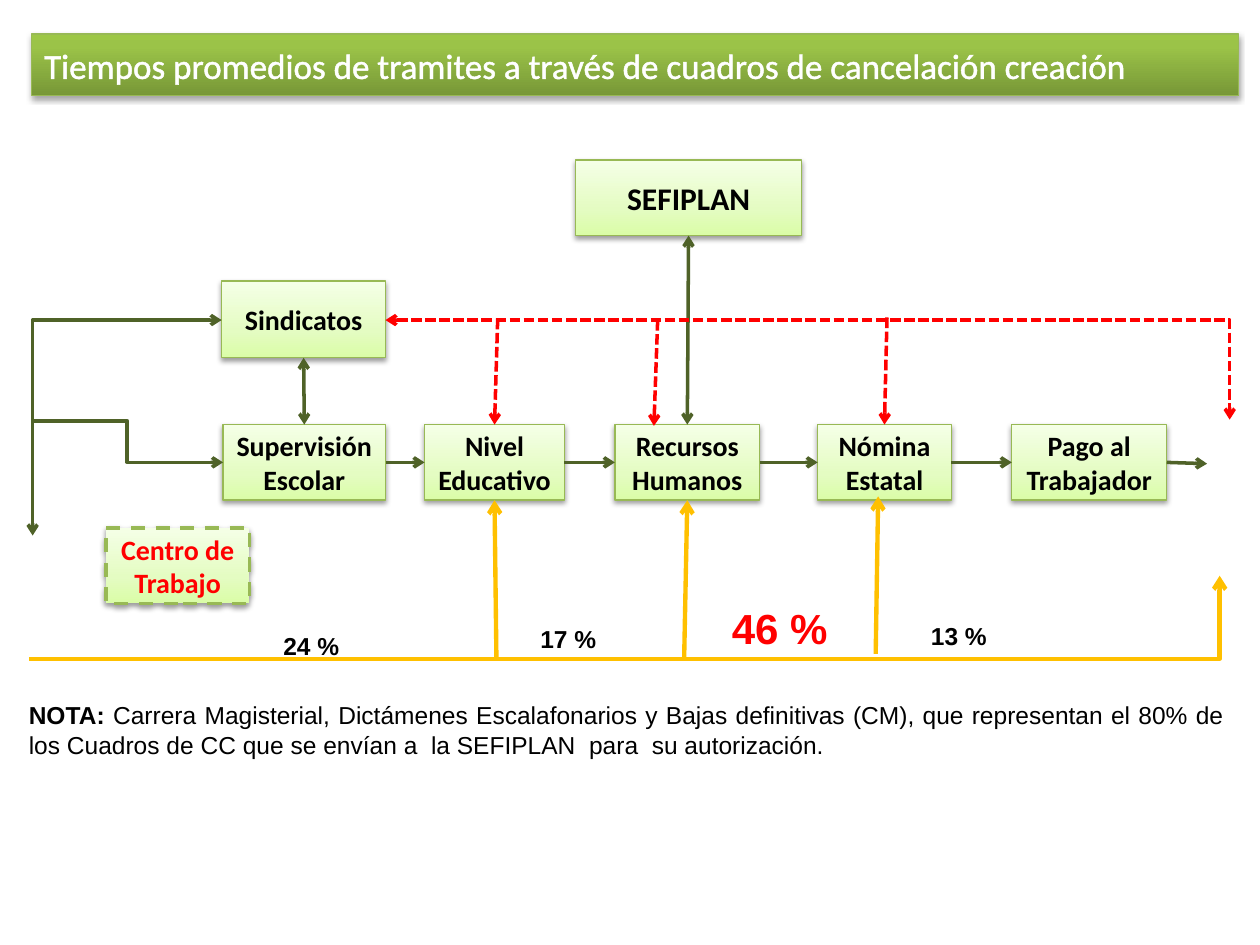
from lxml.etree import SubElement
from pptx import Presentation
from pptx.dml.color import RGBColor
from pptx.enum.dml import MSO_LINE
from pptx.enum.shapes import MSO_CONNECTOR as CONNECTOR, MSO_SHAPE as SHAPE
from pptx.enum.text import MSO_ANCHOR as ANCHOR, MSO_AUTO_SIZE as AUTO_SIZE, PP_ALIGN as ALIGN
from pptx.oxml import parse_xml
from pptx.oxml.ns import nsdecls, qn
from pptx.util import Inches, Pt

TITLE = "Tiempos promedios de tramites a través de cuadros de cancelación creación"
BLACK, WHITE, RED = "000000", "FFFFFF", "FF0000"
BORDER, GREEN, AMBER = "98B955", "4F6228", "FFC000"
PALE_STOPS = [(0, "DAFDA7"), (35, "E4FCC2"), (100, "F5FFE7")]
BANNER_STOPS = [(0, "779737"), (80, "9BC348"), (100, "9DC746")]
TOP, LEFT, BOTTOM, RIGHT = range(4)

ROW_TOP, BOX_HEIGHT = 3.37, 0.6
STAGES = [
    ("Supervisión Escolar", 1.77, 1.29),
    ("Nivel Educativo", 3.37, 1.11),
    ("Recursos Humanos", 4.88, 1.15),
    ("Nómina Estatal", 6.49, 1.06),
    ("Pago al Trabajador ", 8.03, 1.23),
]
SIDE_BOXES = [
    ("SEFIPLAN", (4.57, 1.27, 1.79, BOX_HEIGHT), 18),
    ("Sindicatos", (1.76, 2.23, 1.3, 0.61), 16),
]
WORKPLACE = ("Centro de Trabajo", (0.84, 4.19, 1.14, BOX_HEIGHT), 16)
PERCENTAGES = [
    ("24 %", (2.15, 4.96, 0.86, 0.34), 14, BLACK),
    ("17 %", (4.19, 4.9, 1.02, 0.34), 14, BLACK),
    ("46 %", (5.71, 4.73, 1.06, 0.5), 24, RED),
    ("13 %", (7.29, 4.88, 1.13, 0.34), 14, BLACK),
]
NOTE = [
    ("NOTA: ", True),
    ("Carrera Magisterial, Dictámenes Escalafonarios y Bajas definitivas (CM), que representan "
     "el 80% de los Cuadros de CC que se envían a  la SEFIPLAN  para  su autorización.", False),
]
BENDS = [
    ((1.76, 2.54), (0.26, 4.25), GREEN, 2, True, "bentConnector2"),
    ((0.25, 3.34), (1.77, 3.67), GREEN, 2, False, "bentConnector3"),
    ((3.06, 2.54), (9.76, 3.33), RED, 2, True, "bentConnector2"),
    ((0.23, 5.23), (9.68, 4.57), AMBER, 2.5, False, "bentConnector2"),
]
RED_DROPS = [
    ((3.95, 2.53), (3.93, 3.37), "Nivel Educativo"),
    ((5.22, 2.54), (5.19, 3.38), None),
    ((7.04, 2.52), (7.02, 3.37), "Nómina Estatal"),
]
AMBER_RISES = [
    ((3.94, 5.22), (3.93, 3.97), "Nivel Educativo"),
    ((5.43, 5.22), (5.45, 3.97), "Recursos Humanos"),
    ((6.95, 5.19), (6.97, 3.94), None),
]


def color(value):
    return RGBColor.from_string(value)


def format_run(run, font, size, value, bold):
    run.font.name, run.font.size, run.font.bold = font, Pt(size), bold
    run.font.color.rgb = color(value)


def style_panel(shape, stops, shadow_alpha, width=0.75, dash=None):
    shape.fill.solid()
    properties = shape._element.spPr
    stop_xml = "".join(
        f'<a:gs pos="{position * 1000}"><a:srgbClr val="{value}"/></a:gs>' for position, value in stops)
    gradient = parse_xml(
        f'<a:gradFill {nsdecls("a")} rotWithShape="1"><a:gsLst>{stop_xml}</a:gsLst>'
        '<a:lin ang="16200000" scaled="0"/></a:gradFill>')
    properties.replace(properties.find(qn("a:solidFill")), gradient)
    shape.line.color.rgb = color(BORDER)
    shape.line.width = Pt(width)
    if dash:
        shape.line.dash_style = dash
    shape.shadow.inherit = False
    properties.find(qn("a:effectLst")).append(parse_xml(
        f'<a:outerShdw {nsdecls("a")} blurRad="{Pt(3.1)}" dist="{Pt(1.6)}" dir="5400000" '
        f'rotWithShape="0"><a:srgbClr val="{BLACK}"><a:alpha val="{shadow_alpha * 1000}"/>'
        '</a:srgbClr></a:outerShdw>'))


def add_box(text, place, size, value=BLACK, **border):
    shape = slide.shapes.add_shape(SHAPE.RECTANGLE, *map(Inches, place))
    style_panel(shape, PALE_STOPS, 38, **border)
    frame = shape.text_frame
    frame.text = text
    frame.word_wrap = True
    frame.vertical_anchor = ANCHOR.MIDDLE
    frame.paragraphs[0].alignment = ALIGN.CENTER
    format_run(frame.paragraphs[0].runs[0], "Calibri", size, value, True)
    return shape


def add_text(pieces, place, size, value, alignment=ALIGN.LEFT):
    frame = slide.shapes.add_textbox(*map(Inches, place)).text_frame
    frame.word_wrap = True
    paragraph = frame.paragraphs[0]
    paragraph.alignment = alignment
    for text, bold in pieces:
        run = paragraph.add_run()
        run.text = text
        format_run(run, "Arial", size, value, bold)


def add_arrow(start, end, value, width=2, both=False, bend=None):
    kind = CONNECTOR.ELBOW if bend else CONNECTOR.STRAIGHT
    connector = slide.shapes.add_connector(kind, *map(Inches, start + end))
    properties = connector._element.spPr
    if bend:
        properties.find(qn("a:prstGeom")).set("prst", bend)
    connector.line.color.rgb = color(value)
    connector.line.width = Pt(width)
    if value == RED:
        connector.line.dash_style = MSO_LINE.SQUARE_DOT
    line = properties.find(qn("a:ln"))
    for tag in ["a:headEnd", "a:tailEnd"] if both else ["a:tailEnd"]:
        SubElement(line, qn(tag), type="arrow")
    SubElement(properties, qn("a:effectLst"))
    return connector


def join(first, first_side, second, second_side, both=False):
    connector = add_arrow((0, 0), (1, 1), GREEN, both=both)
    connector.begin_connect(first, first_side)
    connector.end_connect(second, second_side)


presentation = Presentation()
presentation.slide_width, presentation.slide_height = Inches(10), Inches(7.5)
slide = presentation.slides.add_slide(presentation.slide_layouts[5])

title = slide.shapes.title
title.left, title.top, title.width, title.height = map(Inches, (0.25, 0.27, 9.58, 0.49))
style_panel(title, BANNER_STOPS, 35)
title.text_frame.text = TITLE
title.text_frame.word_wrap = False
title.text_frame.auto_size = AUTO_SIZE.NONE
title.text_frame.vertical_anchor = ANCHOR.MIDDLE
title.text_frame.paragraphs[0].alignment = ALIGN.LEFT
title_run = title.text_frame.paragraphs[0].runs[0]
format_run(title_run, "Calibri", 20, WHITE, False)
title_run.font._element.insert(0, parse_xml(
    f'<a:ln {nsdecls("a")} w="{Pt(1.45)}"><a:solidFill><a:srgbClr val="{WHITE}"/></a:solidFill></a:ln>'))

boxes = {text: add_box(text, place, size) for text, place, size in SIDE_BOXES}
add_box(*WORKPLACE, RED, width=2, dash=MSO_LINE.DASH)
for text, left, width in STAGES:
    boxes[text] = add_box(text, (left, ROW_TOP, width, BOX_HEIGHT), 16)

join(boxes["SEFIPLAN"], BOTTOM, boxes["Recursos Humanos"], TOP, both=True)
join(boxes["Sindicatos"], BOTTOM, boxes["Supervisión Escolar"], TOP, both=True)
stages = [boxes[text] for text, left, width in STAGES]
for current, following in zip(stages, stages[1:]):
    join(current, RIGHT, following, LEFT)
add_arrow((9.26, 3.67), (9.58, 3.68), GREEN).begin_connect(stages[-1], RIGHT)

for bend in BENDS:
    add_arrow(*bend)
for arrows, value, width, side in [(RED_DROPS, RED, 2, TOP), (AMBER_RISES, AMBER, 2.5, BOTTOM)]:
    for start, end, target in arrows:
        arrow = add_arrow(start, end, value, width)
        if target:
            arrow.end_connect(boxes[target], side)

for text, place, size, value in PERCENTAGES:
    add_text([(text, True)], place, size, value)
add_text(NOTE, (0.13, 5.51, 9.69, 0.57), 14, BLACK, ALIGN.JUSTIFY)

presentation.save("out.pptx")
